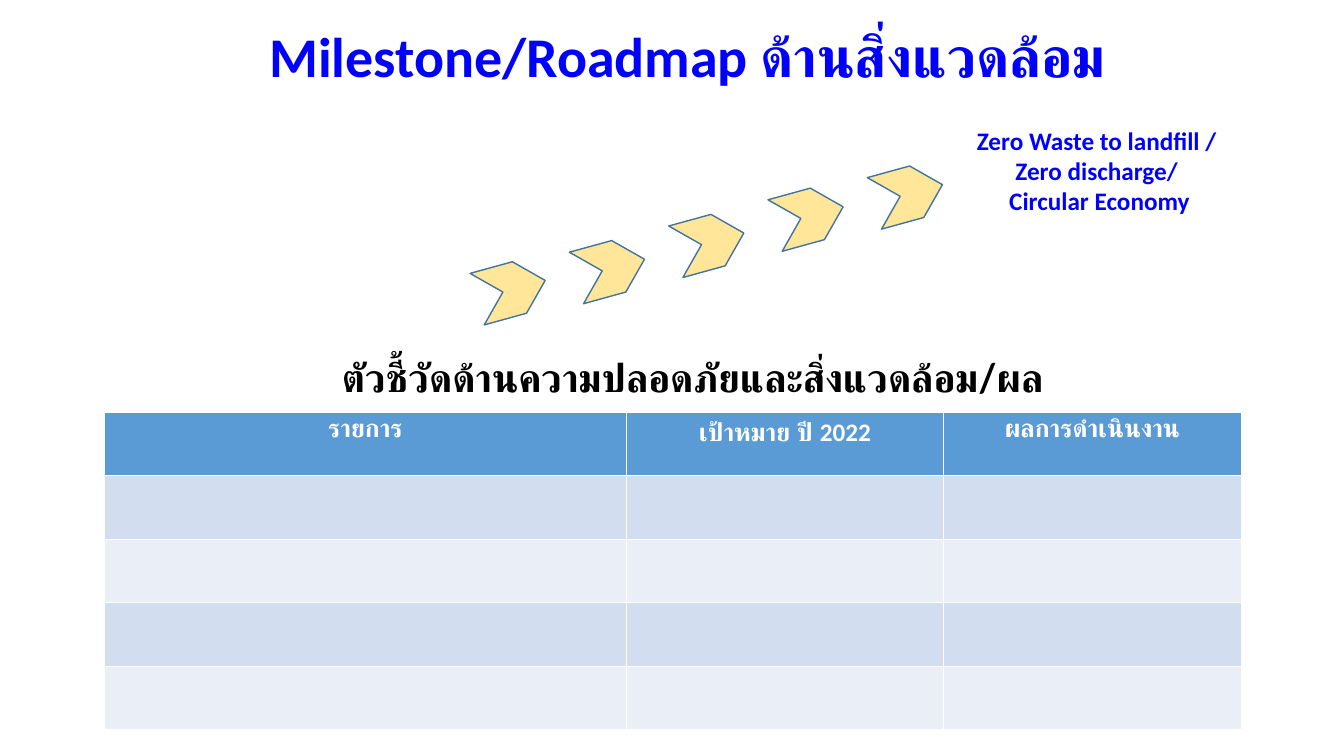
from pptx import Presentation
from pptx.dml.color import RGBColor
from pptx.enum import shapes, text
from pptx.util import Inches, Pt

BLUE = RGBColor(0x00, 0x00, 0xFF)
BLACK = RGBColor(0x00, 0x00, 0x00)
WHITE = RGBColor(0xFF, 0xFF, 0xFF)
HEADER_BLUE = RGBColor(0x5B, 0x9B, 0xD5)
BAND_DARK = RGBColor(0xD2, 0xDE, 0xEF)
BAND_LIGHT = RGBColor(0xEA, 0xEF, 0xF7)
CHEVRON_YELLOW = RGBColor(0xFF, 0xE6, 0x99)
CHEVRON_EDGE = RGBColor(0x43, 0x73, 0x9E)


def write_lines(frame, lines, size, color, font="Calibri"):
    """Fill a text frame with centred bold paragraphs."""
    for i, line in enumerate(lines):
        paragraph = frame.paragraphs[0] if i == 0 else frame.add_paragraph()
        paragraph.alignment = text.PP_ALIGN.CENTER
        run = paragraph.add_run()
        run.text = line
        run.font.color.rgb = color
        looks = {"size": Pt(size), "bold": True, "name": font}
        for name, value in looks.items():
            setattr(run.font, name, value)


def add_label(box, lines, size, color, font="Calibri"):
    """Add a wrapping text box and return its frame."""
    frame = slide.shapes.add_textbox(*map(Inches, box)).text_frame
    frame.word_wrap = True
    write_lines(frame, lines, size, color, font)
    return frame


prs = Presentation()
prs.slide_width, prs.slide_height = Inches(13.33), Inches(7.5)
slide = prs.slides.add_slide(prs.slide_layouts[6])

# Title
title = add_label((1.82, 0.24, 9.71, 0.6),
                  ["Milestone/Roadmap ด้านสิ่งแวดล้อม "], 40, BLUE)
title.margin_left = Inches(0.54)
title.paragraphs[0].line_spacing = 0.9
title.paragraphs[0].space_before = Pt(5)

# Table heading
heading = add_label((2.84, 3.34, 8.06, 0.86),
                    ["ตัวชี้วัดด้านความปลอดภัยและสิ่งแวดล้อม/ผล"], 28, BLACK, "Lato")
heading.vertical_anchor = text.MSO_ANCHOR.MIDDLE
heading.paragraphs[0].line_spacing = 0.9

# Indicator table
headers = ["รายการ", "เป้าหมาย ปี 2022", "ผลการดำเนินงาน"]
column_widths = [5.17, 3.15, 2.95]
indicators = slide.shapes.add_table(
    5, 3, Inches(1.04), Inches(4.09), Inches(11.27), Inches(3.15)).table
for column, width in zip(indicators.columns, column_widths):
    column.width = Inches(width)
for r, row in enumerate(indicators.rows):
    row.height = Inches(0.63)
    band = HEADER_BLUE if r == 0 else (BAND_LIGHT, BAND_DARK)[r % 2]
    for cell in row.cells:
        cell.fill.solid()
        cell.fill.fore_color.rgb = band
for c, header in enumerate(headers):
    write_lines(indicators.cell(0, c).text_frame, [header], 18, WHITE)

# Goal at the end of the roadmap
add_label((9.59, 1.19, 2.63, 1.01),
          ["Zero Waste to landfill / ", "Zero discharge/ ", "Circular Economy"],
          18, BLUE)

# Rising chevrons, evenly spaced across
for i, top in enumerate([2.61, 2.4, 2.14, 1.88, 1.66]):
    chevron = slide.shapes.add_shape(
        shapes.MSO_SHAPE.CHEVRON,
        Inches(4.72 + 0.985 * i), Inches(top), Inches(0.7), Inches(0.53))
    chevron.rotation = 344.6
    chevron.shadow.inherit = False
    chevron.fill.solid()
    chevron.fill.fore_color.rgb = CHEVRON_YELLOW
    chevron.line.color.rgb = CHEVRON_EDGE
    chevron.line.width = Pt(1)

prs.save("out.pptx")
